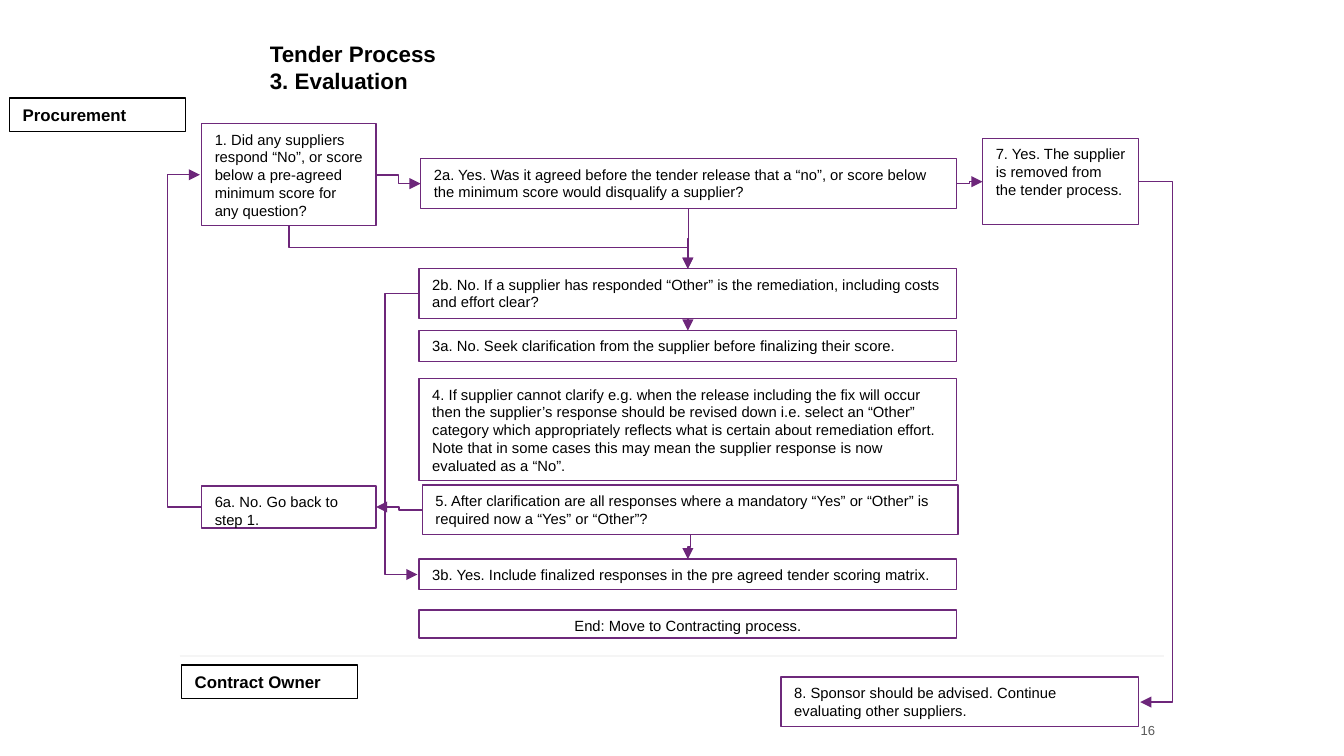
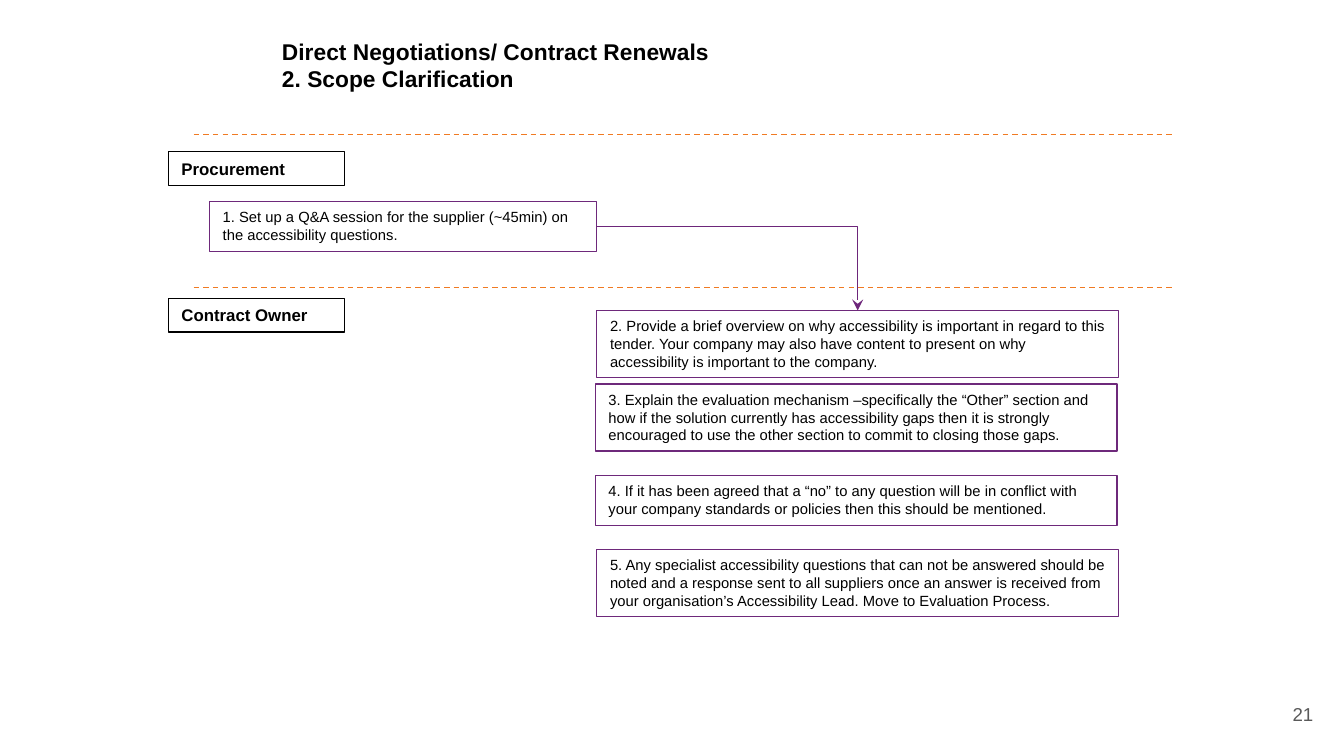
from dataclasses import dataclass

from lxml import etree
from pptx import Presentation
from pptx import util as u
from pptx.dml.color import RGBColor
from pptx.enum import dml, shapes, text
from pptx.oxml import ns


@dataclass(frozen=True)
class Theme:
    font: str = "Arial"
    ink: str = "000000"
    step_line: str = "6E297B"
    arrow: str = "6D267A"
    lane: str = "F07A22"
    pale: str = "F5F5F5"
    grey: str = "595959"
    white: str = "FFFFFF"
    step_size: float = 7.9
    label_size: float = 9
    line_width: float = 0.75


THEME = Theme()
LOOP = 0.64   # how far a loop swings out from its box, cm
NUDGE = 0.03  # offset between the two ends of a loop, cm
SIDES = {"left": (0, 0.5), "right": (1, 0.5), "top": (0.5, 0), "bottom": (0.5, 1)}

# Content: areas are left, top, width, height in cm
EVALUATION = {
    "title": ("Tender Process\n3. Evaluation", (4.85, 0.51, 17.15, 0.69), 12),
    "number": ("16", (17.63, 13.46, 4.45, 0.76), 7, 0.8),
    "steps": {
        "1": ("1. Did any suppliers respond “No”, or score below a pre-agreed minimum "
              "score for any question?", (3.81, 2.34, 3.3, 1.93)),
        "2a": ("2a. Yes. Was it agreed before the tender release that a “no”, or score "
               "below the minimum score would disqualify a supplier?",
               (7.95, 3, 10.13, 0.94)),
        "7": ("7. Yes. The supplier is removed from the tender process.",
              (18.57, 2.62, 2.95, 1.63)),
        "8": ("8. Sponsor should be advised. Continue evaluating other suppliers.",
              (14.76, 12.8, 6.76, 0.94)),
        "2b": ("2b. No. If a supplier has responded “Other” is the remediation, "
               "including costs and effort clear?", (7.92, 5.08, 10.16, 0.94)),
        "3a": ("3a. No. Seek clarification from the supplier before finalizing their "
               "score.", (7.92, 6.25, 10.16, 0.58)),
        "4": ("4. If supplier cannot clarify e.g. when the release including the fix "
              "will occur then the supplier’s response should be revised down i.e. "
              "select an “Other” category which appropriately reflects what is certain "
              "about remediation effort. Note that in some cases this may mean the "
              "supplier response is now evaluated as a “No”.",
              (7.92, 7.16, 10.16, 1.93)),
        "5": ("5. After clarification are all responses where a mandatory “Yes” or "
              "“Other” is required now a “Yes” or “Other”?", (7.98, 9.17, 10.13, 0.94)),
        "6a": ("6a. No. Go back to step 1.", (3.81, 9.19, 3.3, 0.79)),
        "3b": ("3b. Yes. Include finalized responses in the pre agreed tender scoring "
               "matrix.", (7.92, 10.57, 10.16, 0.58)),
        "end": ("End: Move to Contracting process.", (7.92, 11.53, 10.16, 0.53)),
    },
    "fixed": ("7", "6a", "end"),
    "centred": ("end",),
    "arrows": [
        ("6a", "left", "1", "left"), ("5", "left", "6a", "right"),
        ("2b", "left", "3b", "left"), ("5", "bottom", "3b", "top"),
        ("2b", "bottom", "3a", "top"), ("1", "right", "2a", "left"),
        ("1", "bottom", "2b", "top"), ("2a", "bottom", "2b", "top"),
        ("2a", "right", "7", "left"), ("7", "right", "8", "right"),
    ],
    "head": "triangle",
    "labels": [("Procurement", 0.18, 1.85, None),
               ("Contract Owner", 3.43, 12.57, THEME.white)],
    "lanes": [(3.4, 22, 12.4, THEME.pale, False)],
}
CLARIFICATION = {
    "title": ("Direct Negotiations/ Contract Renewals\n2. Scope Clarification",
              (5.08, 0.46, 17.15, 0.86), 12.2),
    "number": ("21", (21.77, 12.95, 3.3, 1.09), 10, 1),
    "steps": {
        "1": ("1. Set up a Q&A session for the supplier (~45min) on the accessibility "
              "questions.", (3.96, 3.81, 7.32, 0.94)),
        "2": ("2. Provide a brief overview on why accessibility is important in regard "
              "to this tender. Your company may also have content to present on why "
              "accessibility is important to the company.", (11.28, 5.87, 9.86, 1.27)),
        "3": ("3. Explain the evaluation mechanism –specifically the “Other” section "
              "and how if the solution currently has accessibility gaps then it is "
              "strongly encouraged to use the other section to commit to closing those "
              "gaps.", (11.25, 7.26, 9.86, 1.27)),
        "4": ("4. If it has been agreed that a “no” to any question will be in conflict "
              "with your company standards or policies then this should be mentioned.",
              (11.25, 8.99, 9.86, 0.94)),
        "5": ("5. Any specialist accessibility questions that can not be answered "
              "should be noted and a response sent to all suppliers once an answer is "
              "received from your organisation’s Accessibility Lead. Move to Evaluation "
              "Process.", (11.28, 10.39, 9.86, 1.27)),
    },
    "fixed": (),
    "centred": (),
    "arrows": [("1", "right", "2", "top")],
    "head": "stealth",
    "labels": [("Procurement", 3.18, 2.87, None), ("Contract Owner", 3.18, 5.64, None)],
    "lanes": [(3.66, 22.22, y, THEME.lane, True) for y in (2.54, 5.44)],
}


def cm(values):
    return [u.Cm(value) for value in values]


def write(box, words, size, colour=THEME.ink, bold=False, align="LEFT"):
    frame = box.text_frame
    frame.word_wrap = True
    para = frame.paragraphs[0]
    para.text = words
    para.alignment = getattr(text.PP_ALIGN, align)
    para.font.name = THEME.font
    para.font.size = u.Pt(size)
    para.font.bold = bold
    para.font.color.rgb = RGBColor.from_string(colour)
    return para


def add_plain_text(page, words, area, size, **style):
    box = page.shapes.add_textbox(*cm(area))
    frame = box.text_frame
    frame.margin_left = frame.margin_right = u.Cm(0.25)
    frame.margin_top = frame.margin_bottom = u.Cm(0.25)
    return frame, write(box, words, size, **style)


def style_line(line, colour):
    line.color.rgb = RGBColor.from_string(colour)
    line.width = u.Pt(THEME.line_width)


def add_box(page, words, area, size, line, fill=None, grow=True, **style):
    box = page.shapes.add_shape(shapes.MSO_SHAPE.RECTANGLE, *cm(area))
    box.shadow.inherit = False
    if fill:
        box.fill.solid()
        box.fill.fore_color.rgb = RGBColor.from_string(fill)
    else:
        box.fill.background()
    style_line(box.line, line)
    write(box, words, size, **style)
    box.text_frame.vertical_anchor = text.MSO_ANCHOR.TOP
    if grow:
        box.text_frame.auto_size = text.MSO_AUTO_SIZE.SHAPE_TO_FIT_TEXT


def add_line(page, kind, start, end, colour):
    line = page.shapes.add_connector(kind, *cm(start + end))
    style_line(line.line, colour)
    etree.SubElement(line._element.spPr, ns.qn("a:effectLst"))
    return line


def side_point(area, side):
    left, top, width, height = area
    across, down = SIDES[side]
    return left + across * width, top + down * height


def add_arrow(page, start, start_side, end, end_side, head):
    """Join two box sides with an elbow that leaves and enters at right angles."""
    turn, bend, geometry = 0, None, "bentConnector3"
    if start_side == end_side:  # loop around one side
        outward = -1 if start_side == "left" else 1
        if abs(end[0] - start[0]) < NUDGE:
            end = (start[0] + outward * NUDGE, end[1])
        bend = outward * LOOP / (end[0] - start[0])
    elif start_side == "bottom":  # down, across, down: a turned elbow
        dx, dy = end[0] - start[0], end[1] - start[1]
        mid_x, mid_y = start[0] + dx / 2, start[1] + dy / 2
        reach = -dy / 2 if dx > 0 else dy / 2
        turn = 270 if dx > 0 else 90
        start = (mid_x - reach, mid_y - abs(dx) / 2)
        end = (mid_x + reach, mid_y + abs(dx) / 2)
    elif end_side == "top":  # across, then down
        geometry = "bentConnector2"

    arrow = add_line(page, shapes.MSO_CONNECTOR.ELBOW, start, end, THEME.arrow)
    properties = arrow._element.spPr
    preset = properties.find(ns.qn("a:prstGeom"))
    preset.set("prst", geometry)
    if turn:
        properties.find(ns.qn("a:xfrm")).set("rot", str(turn * 60000))
    if bend is not None:
        guides = preset.find(ns.qn("a:avLst"))
        etree.SubElement(guides, ns.qn("a:gd"), name="adj1",
                         fmla=f"val {round(bend * 100000)}")
    etree.SubElement(properties.find(ns.qn("a:ln")), ns.qn("a:tailEnd"), type=head)


def add_page(deck, content):
    page = deck.slides.add_slide(deck.slide_layouts[6])

    # Title
    words, area, size = content["title"]
    add_plain_text(page, words, area, size, bold=True)

    # Lane rules
    for left, right, y, colour, dashed in content["lanes"]:
        rule = add_line(page, shapes.MSO_CONNECTOR.STRAIGHT, (left, y), (right, y), colour)
        if dashed:
            rule.line.dash_style = dml.MSO_LINE.DASH

    # Steps and the arrows between them
    steps = content["steps"]
    for key, (words, area) in steps.items():
        add_box(page, words, area, THEME.step_size, THEME.step_line,
                grow=key not in content["fixed"],
                align="CENTER" if key in content["centred"] else "LEFT")
    for source, source_side, target, target_side in content["arrows"]:
        add_arrow(page, side_point(steps[source][1], source_side), source_side,
                  side_point(steps[target][1], target_side), target_side,
                  content["head"])

    # Lane labels
    for words, left, top, fill in content["labels"]:
        add_box(page, words, (left, top, 3.33, 0.64), THEME.label_size, THEME.ink,
                fill=fill, bold=True)

    # Page number
    words, area, size, spacing = content["number"]
    frame, para = add_plain_text(page, words, area, size, colour=THEME.grey, align="RIGHT")
    frame.vertical_anchor = text.MSO_ANCHOR.MIDDLE
    para.line_spacing = spacing


def main():
    deck = Presentation()
    deck.slide_width, deck.slide_height = cm((25.4, 14.29))
    for content in (EVALUATION, CLARIFICATION):
        add_page(deck, content)
    deck.save("out.pptx")


if __name__ == "__main__":
    main()
